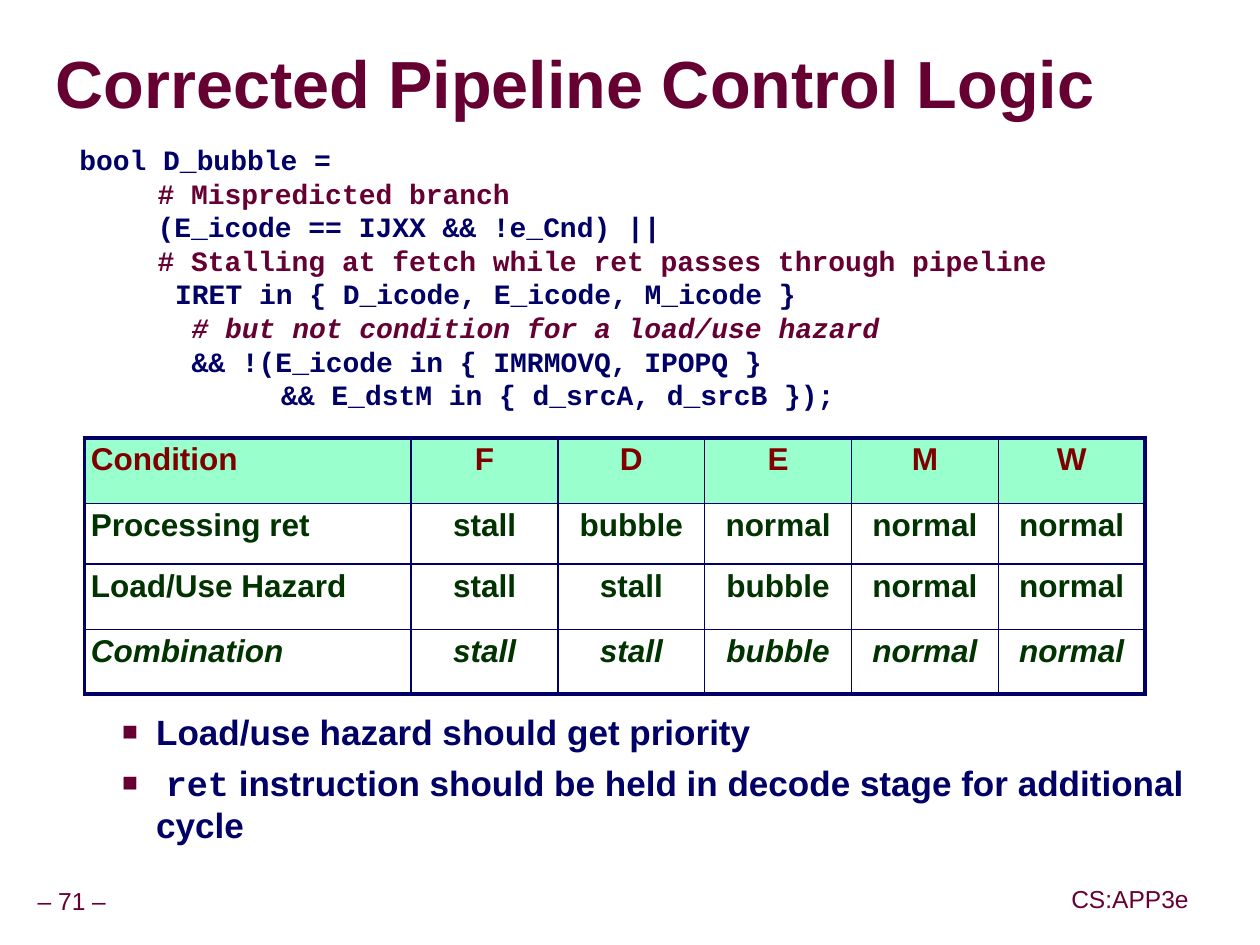
from lxml import etree
from pptx import Presentation
from pptx.dml.color import RGBColor
from pptx.enum.text import MSO_ANCHOR, PP_ALIGN
from pptx.oxml import parse_xml
from pptx.oxml.ns import nsdecls, qn
from pptx.util import Inches, Pt

LEFT, CENTER = PP_ALIGN.LEFT, PP_ALIGN.CENTER
TOP, MIDDLE = MSO_ANCHOR.TOP, MSO_ANCHOR.MIDDLE
NAVY = RGBColor(0x00, 0x00, 0x66)
PLUM = RGBColor(0x66, 0x00, 0x33)
MAROON = RGBColor(0x80, 0x00, 0x00)
GREEN = RGBColor(0x00, 0x33, 0x00)
MINT = RGBColor(0x99, 0xFF, 0xCC)
SANS, MONO = "Arial", "Courier New"


def add_box(page, left, top, width, height, margin=0.05, anchor=TOP, wrap=True):
    box = page.shapes.add_textbox(Inches(left), Inches(top), Inches(width), Inches(height))
    frame = box.text_frame
    frame.word_wrap = wrap
    frame.vertical_anchor = anchor
    frame.margin_left = frame.margin_right = Inches(margin)
    frame.margin_top = frame.margin_bottom = Inches(min(margin, 0.05))
    return frame


def style(span, size, color, name=SANS, bold=True, italic=False):
    span.font.size = Pt(size)
    span.font.color.rgb = color
    span.font.name = name
    span.font.bold = bold
    span.font.italic = italic


deck = Presentation()
deck.slide_width, deck.slide_height = Inches(9.99), Inches(7.49)
page = deck.slides.add_slide(deck.slide_layouts[6])

for text, left, top, width in [("– 71 –", 0.24, 6.99, 0.66), ("CS:APP3e", 8.44, 6.98, 1.04)]:
    frame = add_box(page, left, top, width, 0.32, anchor=MIDDLE, wrap=False)
    frame.text = text
    para = frame.paragraphs[0]
    para.alignment = CENTER
    para.line_spacing = 0.9
    style(para.runs[0], 14, PLUM, bold=False)

title = add_box(page, 0.44, 0.27, 9.52, 0.85, margin=0, anchor=MIDDLE)
title.text = "Corrected Pipeline Control Logic"
title.paragraphs[0].line_spacing = 0.87
span = title.paragraphs[0].runs[0]
style(span, 38, PLUM)
shadow = parse_xml(
    f'<a:effectLst {nsdecls("a")}><a:outerShdw dist="38100" dir="2700000" algn="tl">'
    '<a:srgbClr val="C0C0C0"/></a:outerShdw></a:effectLst>'
)
span.font.fill._xPr.find(qn("a:solidFill")).addnext(shadow)

bullets = add_box(page, 0.33, 5.58, 9.18, 1.62, margin=0.1)
bullet_lines = [
    [("Load/use hazard should get priority", SANS)],
    [
        (" ", SANS),
        ("ret", MONO),
        (" instruction should be held in decode stage for additional cycle", SANS),
    ],
]
for index, spans in enumerate(bullet_lines):
    para = bullets.add_paragraph() if index else bullets.paragraphs[0]
    para.space_before = Pt(5)
    for text, name in spans:
        span = para.add_run()
        span.text = text
        style(span, 20, NAVY, name)
    props = para._p.get_or_add_pPr()
    props.set("marL", str(Inches(0.81)))
    props.set("indent", str(Inches(-0.27)))
    color = etree.SubElement(props, qn("a:buClr"))
    etree.SubElement(color, qn("a:srgbClr"), val=str(PLUM))
    etree.SubElement(props, qn("a:buSzPct"), val="75000")
    etree.SubElement(props, qn("a:buFont"), typeface=SANS)
    etree.SubElement(props, qn("a:buChar"), char="■")

rows = [
    ["Condition", "F", "D", "E", "M", "W"],
    ["Processing ret", "stall", "bubble", "normal", "normal", "normal"],
    ["Load/Use Hazard", "stall", "stall", "bubble", "normal", "normal"],
    ["Combination", "stall", "stall", "bubble", "normal", "normal"],
]
last_row, last_column = len(rows) - 1, len(rows[0]) - 1
table = page.shapes.add_table(
    len(rows), len(rows[0]), Inches(0.67), Inches(3.47), Inches(8.41), Inches(2.03)
).table
table.first_row = table.horz_banding = False
for column, width in zip(table.columns, [2.59] + [1.164] * last_column):
    column.width = Inches(width)
for row, height in zip(table.rows, [0.52, 0.48, 0.52, 0.51]):
    row.height = Inches(height)

for r, texts in enumerate(rows):
    for c, text in enumerate(texts):
        cell = table.cell(r, c)
        cell.margin_left = cell.margin_right = Inches(0.05)
        cell.margin_top = cell.margin_bottom = Inches(0.05)
        cell.text = text
        para = cell.text_frame.paragraphs[0]
        para.alignment = CENTER if c else LEFT
        para.line_spacing = 0.95
        style(para.runs[0], 18, GREEN if r else MAROON, italic=r == last_row)
        outer_edges = {"L": c == 0, "R": c == last_column, "T": r == 0, "B": r == last_row}
        for side, outer in outer_edges.items():
            line = etree.SubElement(
                cell._tc.get_or_add_tcPr(), qn(f"a:ln{side}"), w=str(Pt(2.25 if outer else 1))
            )
            fill = etree.SubElement(line, qn("a:solidFill"))
            etree.SubElement(fill, qn("a:srgbClr"), val=str(NAVY))
        if r:
            cell.fill.background()
        else:
            cell.fill.solid()
            cell.fill.fore_color.rgb = MINT

code_lines = [
    (0, "bool D_bubble =", NAVY),
    (0.62, "# Mispredicted branch", PLUM),
    (0.62, "(E_icode == IJXX && !e_Cnd) ||", NAVY),
    (0.62, "# Stalling at fetch while ret passes through pipeline", PLUM),
    (0.76, "IRET in { D_icode, E_icode, M_icode }", NAVY),
    (0.89, "# but not condition for a load/use hazard", PLUM),
    (0.89, "&& !(E_icode in { IMRMOVQ, IPOPQ }", NAVY),
    (1.6, "&& E_dstM in { d_srcA, d_srcB });", NAVY),
]
code = add_box(page, 0.58, 1.08, 9.24, 2.51)
for index, (indent, text, color) in enumerate(code_lines):
    para = code.add_paragraph() if index else code.paragraphs[0]
    para.text = text
    props = para._p.get_or_add_pPr()
    props.set("marL", str(Inches(indent)))
    props.set("indent", "0")
    style(para.runs[0], 16, color, MONO, italic=text.startswith("# but"))

deck.save("out.pptx")
